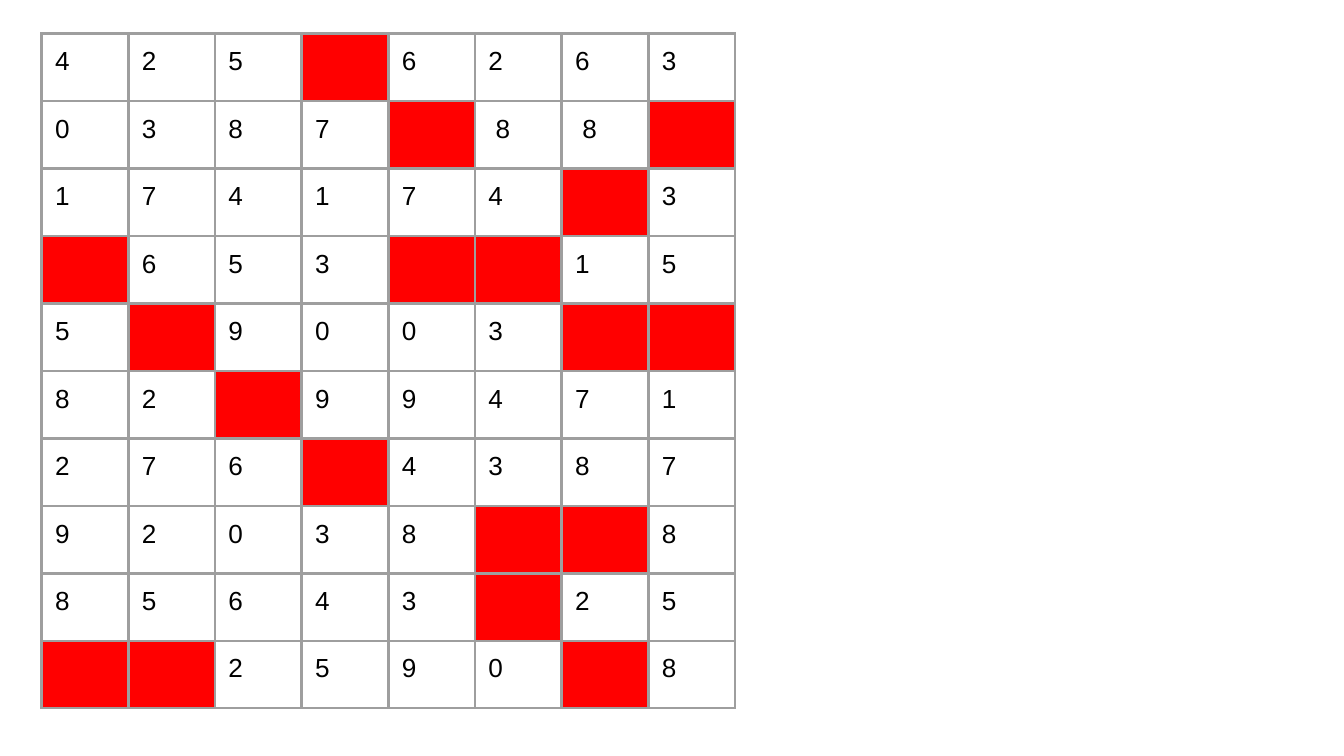
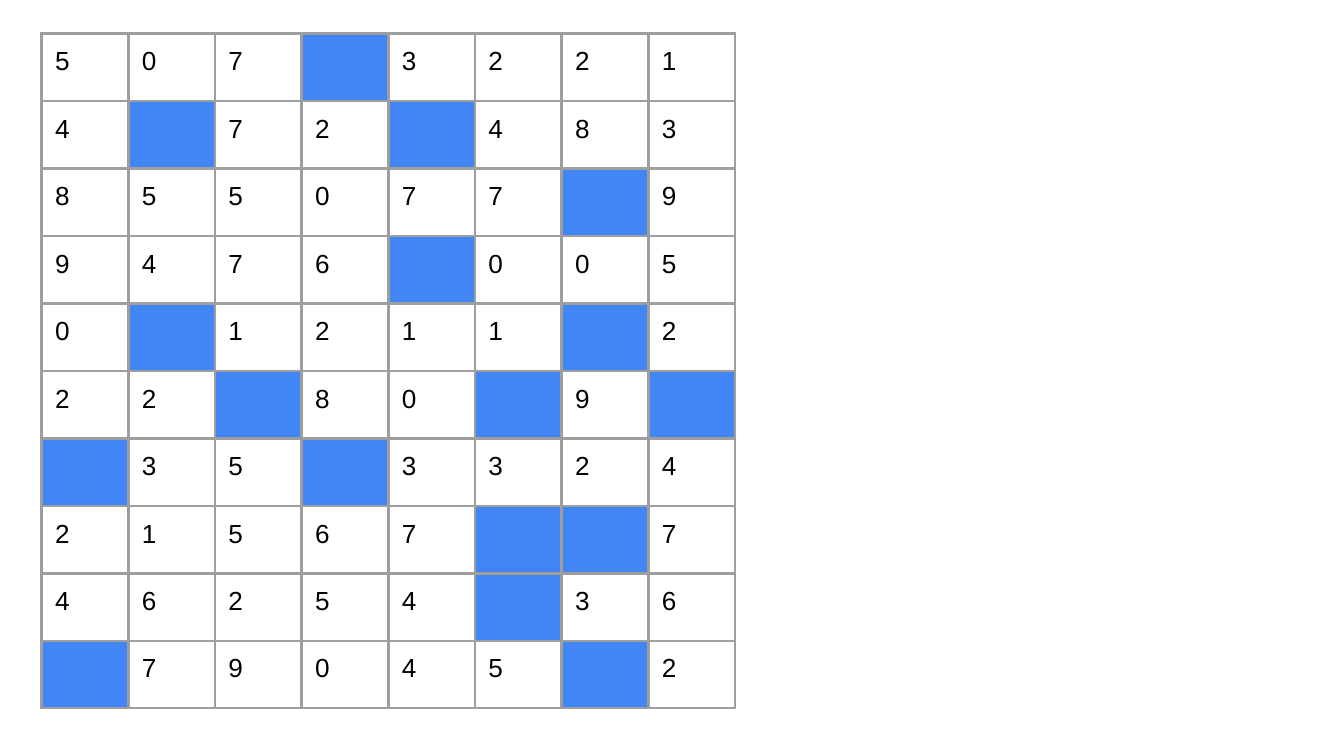
import dataclasses

import lxml.etree
import pptx
import pptx.dml.color
import pptx.oxml.ns
import pptx.util

Inches = pptx.util.Inches


@dataclasses.dataclass(frozen=True)
class Theme:
    font: str = "Arial"
    digit_size: int = 14
    text: str = "000000"
    paper: str = "FFFFFF"
    border: str = "9E9E9E"
    border_width: float = 1.5
    red: str = "FF0000"
    blue: str = "4285F4"


theme = Theme()
color = pptx.dml.color.RGBColor.from_string
qn = pptx.oxml.ns.qn

# Number grids: "#" marks a filled square
BLOCK = "#"
RED_GRID = [
    "4,2,5,#,6,2,6,3",
    "0,3,8,7,#, 8, 8,#",
    "1,7,4,1,7,4,#,3",
    "#,6,5,3,#,#,1,5",
    "5,#,9,0,0,3,#,#",
    "8,2,#,9,9,4,7,1",
    "2,7,6,#,4,3,8,7",
    "9,2,0,3,8,#,#,8",
    "8,5,6,4,3,#,2,5",
    "#,#,2,5,9,0,#,8",
]
BLUE_GRID = [
    "5,0,7,#,3,2,2,1",
    "4,#,7,2,#,4,8,3",
    "8,5,5,0,7,7,#,9",
    "9,4,7,6,#,0,0,5",
    "0,#,1,2,1,1,#,2",
    "2,2,#,8,0,#,9,#",
    "#,3,5,#,3,3,2,4",
    "2,1,5,6,7,#,#,7",
    "4,6,2,5,4,#,3,6",
    "#,7,9,0,4,5,#,2",
]
GRID_WIDTH = Inches(5.16)
GRID_HEIGHT = Inches(5.02)


def add_borders(cell):
    """Draw the same line on all four sides of a table cell."""
    properties = cell._tc.get_or_add_tcPr()
    for side in ("a:lnL", "a:lnR", "a:lnT", "a:lnB"):
        line = lxml.etree.SubElement(properties, qn(side))
        line.set("w", str(pptx.util.Pt(theme.border_width)))
        fill = lxml.etree.SubElement(line, qn("a:solidFill"))
        lxml.etree.SubElement(fill, qn("a:srgbClr")).set("val", theme.border)


# Widescreen presentation, 16:9
presentation = pptx.Presentation()
presentation.slide_width = Inches(10)
presentation.slide_height = presentation.slide_width * 9 // 16
blank_layout = presentation.slide_layouts[6]

# One slide per grid
for grid, block_color in ((RED_GRID, theme.red), (BLUE_GRID, theme.blue)):
    slide = presentation.slides.add_slide(blank_layout)
    slide.background.fill.solid()
    slide.background.fill.fore_color.rgb = color(theme.paper)

    rows = [row.split(",") for row in grid]
    table = slide.shapes.add_table(
        len(rows), len(rows[0]), Inches(0.31), Inches(0.25), GRID_WIDTH, GRID_HEIGHT
    ).table
    table.first_row = False
    table.horz_banding = False

    # Squares
    for row_index, row in enumerate(rows):
        for column_index, value in enumerate(row):
            cell = table.cell(row_index, column_index)
            cell.margin_left = cell.margin_right = Inches(0.1)
            cell.margin_top = cell.margin_bottom = Inches(0.1)
            add_borders(cell)
            cell.fill.solid()
            paragraph = cell.text_frame.paragraphs[0]
            if value == BLOCK:
                cell.fill.fore_color.rgb = color(block_color)
                # Keep the empty line as low as a line of digits
                end = lxml.etree.SubElement(paragraph._p, qn("a:endParaRPr"))
                end.set("sz", str(theme.digit_size * 100))
                continue
            cell.fill.fore_color.rgb = color(theme.paper)
            paragraph.text = value
            font = paragraph.runs[0].font
            font.name = theme.font
            font.size = pptx.util.Pt(theme.digit_size)
            font.color.rgb = color(theme.text)

presentation.save("out.pptx")
